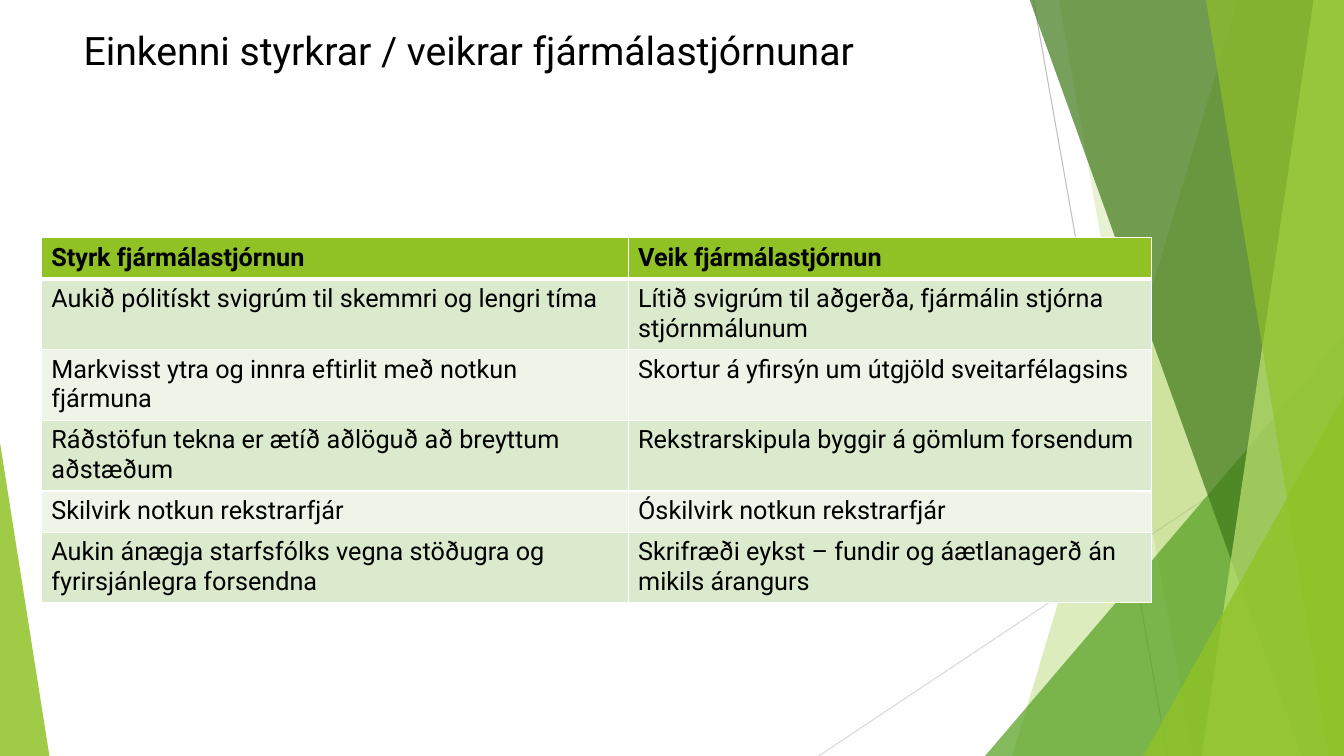
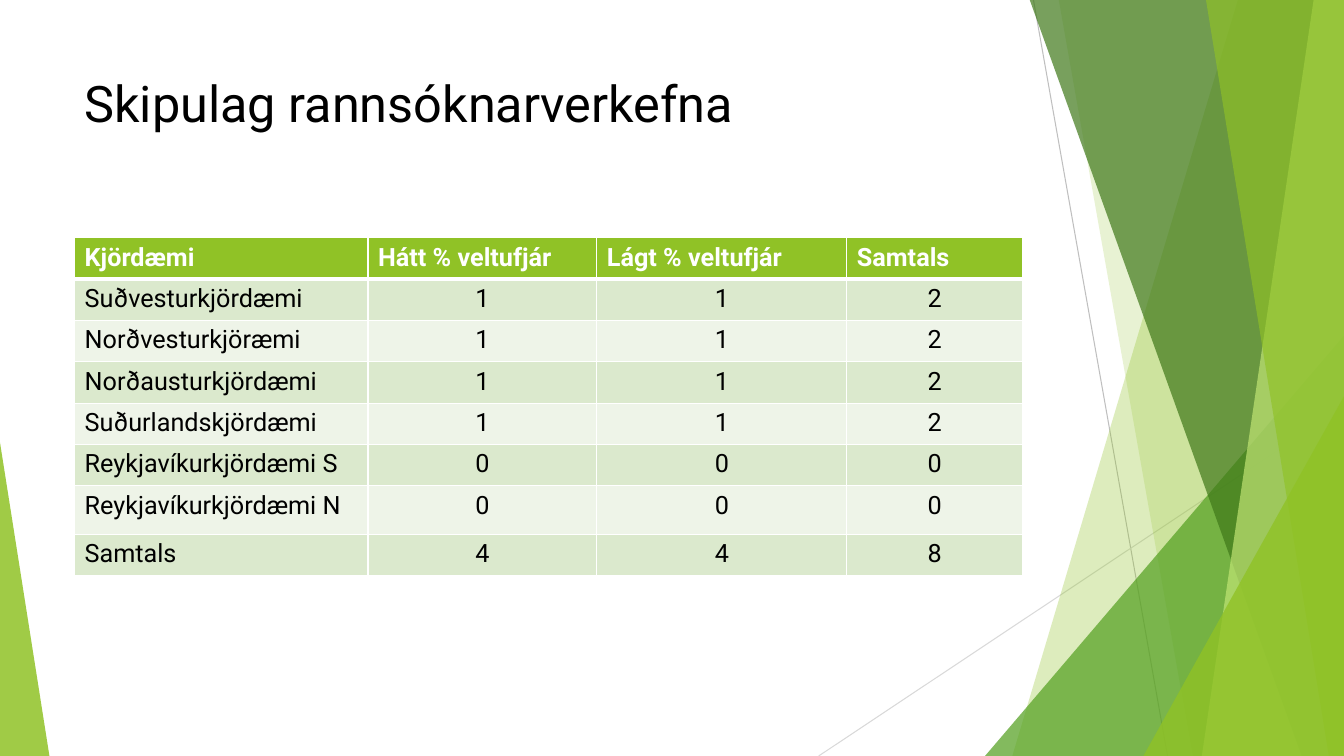
from lxml.etree import SubElement
from pptx import Presentation
from pptx.dml.color import RGBColor
from pptx.enum.shapes import MSO_CONNECTOR, MSO_SHAPE
from pptx.enum.text import PP_ALIGN
from pptx.oxml import parse_xml
from pptx.oxml.ns import nsdecls, qn
from pptx.util import Inches, Pt

FONT = "Roboto"
GREEN, WHITE, BLACK = "90C226", "FFFFFF", "000000"
BANDS = ["DBE9CD", "EEF4E8"]
WIDE, HIGH, TOP = 13.33, 7.5, -0.01
LINES = [
    (10.25, 0, 11.58, HIGH, "BFBFBF"),
    (WIDE, 4.03, 8.12, HIGH, "D9D9D9"),
]
SHARDS = [
    ("band", 12.28, 10.04, GREEN, 30),
    ("band", 10.5, 11.83, GREEN, 20),
    ("peak", 9.77, 3.33, 3.56, 1, "54A021", 72),
    ("band", 10.21, 12.91, "3F7819", 70),
    ("band", 13.03, 11.92, "C0E474", 70),
    ("band", 11.96, 13.18, GREEN, 65),
    ("peak", 11.34, 3.93, 1.99, 1, GREEN, 80),
    ("peak", 0, 4.39, 0.49, 0, GREEN, 85),
]
PAGES = [
    {
        "title": "Einkenni styrkrar / veikrar fjármálastjórnunar",
        "box": (0.73, 0.21, 9.01, 1.1),
        "size": 28,
        "left": 0.41,
        "cols": [5.82, 5.19],
        "high": [0.41] * 6,
        "head": BLACK,
        "rows": [
            ("Styrk fjármálastjórnun", "Veik fjármálastjórnun"),
            ("Aukið pólitískt svigrúm til skemmri og lengri tíma",
             "Lítið svigrúm til aðgerða, fjármálin stjórna stjórnmálunum"),
            ("Markvisst ytra og innra eftirlit með notkun fjármuna",
             "Skortur á yfirsýn um útgjöld sveitarfélagsins"),
            ("Ráðstöfun tekna er ætíð aðlöguð að breyttum aðstæðum",
             "Rekstrarskipula byggir á gömlum forsendum"),
            ("Skilvirk notkun rekstrarfjár", "Óskilvirk notkun rekstrarfjár"),
            ("Aukin ánægja starfsfólks vegna stöðugra og fyrirsjánlegra forsendna",
             "Skrifræði eykst – fundir og áætlanagerð án mikils árangurs"),
        ],
    },
    {
        "title": "Skipulag rannsóknarverkefna",
        "box": (0.74, 0.67, 9.4, 1.44),
        "size": 36,
        "left": 0.74,
        "cols": [2.91, 2.27, 2.48, 1.74],
        "high": [0.41] * 6 + [0.48, 0.41],
        "head": WHITE,
        "rows": [
            ("Kjördæmi", "Hátt % veltufjár", "Lágt % veltufjár", "Samtals"),
            ("Suðvesturkjördæmi", "1", "1", "2"),
            ("Norðvesturkjöræmi", "1", "1", "2"),
            ("Norðausturkjördæmi", "1", "1", "2"),
            ("Suðurlandskjördæmi", "1", "1", "2"),
            ("Reykjavíkurkjördæmi S", "0", "0", "0"),
            ("Reykjavíkurkjördæmi N", "0", "0", "0"),
            ("Samtals", "4", "4", "8"),
        ],
    },
]


def paint(fill, tone, alpha=100):
    fill.solid()
    fill.fore_color.rgb = RGBColor.from_string(tone)
    if alpha < 100:
        node = fill._xPr.find(qn("a:solidFill"))[0]
        SubElement(node, qn("a:alpha"), val=str(alpha * 1000))


def style(para, size, tone, bold=False):
    para.font.name = FONT
    para.font.size = Pt(size)
    para.font.bold = bold
    paint(para.font.fill, tone)


deck = Presentation()
deck.slide_width, deck.slide_height = Inches(WIDE), Inches(HIGH)

for page in PAGES:
    slide = deck.slides.add_slide(deck.slide_layouts[6])
    shapes = slide.shapes
    paint(slide.background.fill, WHITE)

    for x1, y1, x2, y2, tone in LINES:
        line = shapes.add_connector(
            MSO_CONNECTOR.STRAIGHT, Inches(x1), Inches(y1), Inches(x2), Inches(y2))
        line.line.width = Pt(0.75)
        paint(line.line.fill, tone)
        SubElement(line._element.spPr, qn("a:effectLst"))

    for kind, *nums, tone, alpha in SHARDS:
        if kind == "band":
            high, low = nums
            path = shapes.build_freeform(Inches(high), Inches(TOP))
            path.add_line_segments([
                (Inches(x), Inches(y))
                for x, y in [(WIDE, TOP), (WIDE, HIGH), (low, HIGH)]])
            shard = path.convert_to_shape()
        else:
            left, top, width, tip = nums
            shard = shapes.add_shape(
                MSO_SHAPE.ISOSCELES_TRIANGLE,
                Inches(left), Inches(top), Inches(width), Inches(HIGH - top))
            shard.adjustments[0] = tip
        shard.shadow.inherit = False
        shard.line.fill.background()
        paint(shard.fill, tone, alpha)

    frame = shapes.add_textbox(*[Inches(n) for n in page["box"]]).text_frame
    frame.word_wrap = True
    frame.text = page["title"]
    style(frame.paragraphs[0], page["size"], BLACK)

    rows, cols = page["rows"], page["cols"]
    table = shapes.add_table(
        len(rows), len(cols), Inches(page["left"]), Inches(2.36),
        Inches(sum(cols)), Inches(sum(page["high"]))).table
    for col, width in zip(table.columns, cols):
        col.width = Inches(width)
    for r, texts in enumerate(rows):
        table.rows[r].height = Inches(page["high"][r])
        for c, text in enumerate(texts):
            cell = table.cell(r, c)
            cell.text = text
            para = cell.text_frame.paragraphs[0]
            style(para, 18, BLACK if r else page["head"], r == 0)
            if text.isdigit():
                para.alignment = PP_ALIGN.CENTER
            paint(cell.fill, BANDS[(r - 1) % 2] if r else GREEN)
            edges = {"L": 1, "R": 1, "T": 3 if r == 1 else 1, "B": 1 if r else 3}
            for i, (side, width) in enumerate(edges.items()):
                edge = parse_xml(
                    f'<a:ln{side} {nsdecls("a")} w="{Pt(width)}"><a:solidFill>'
                    f'<a:srgbClr val="{WHITE}"/></a:solidFill></a:ln{side}>')
                cell._tc.get_or_add_tcPr().insert(i, edge)

deck.save("out.pptx")
